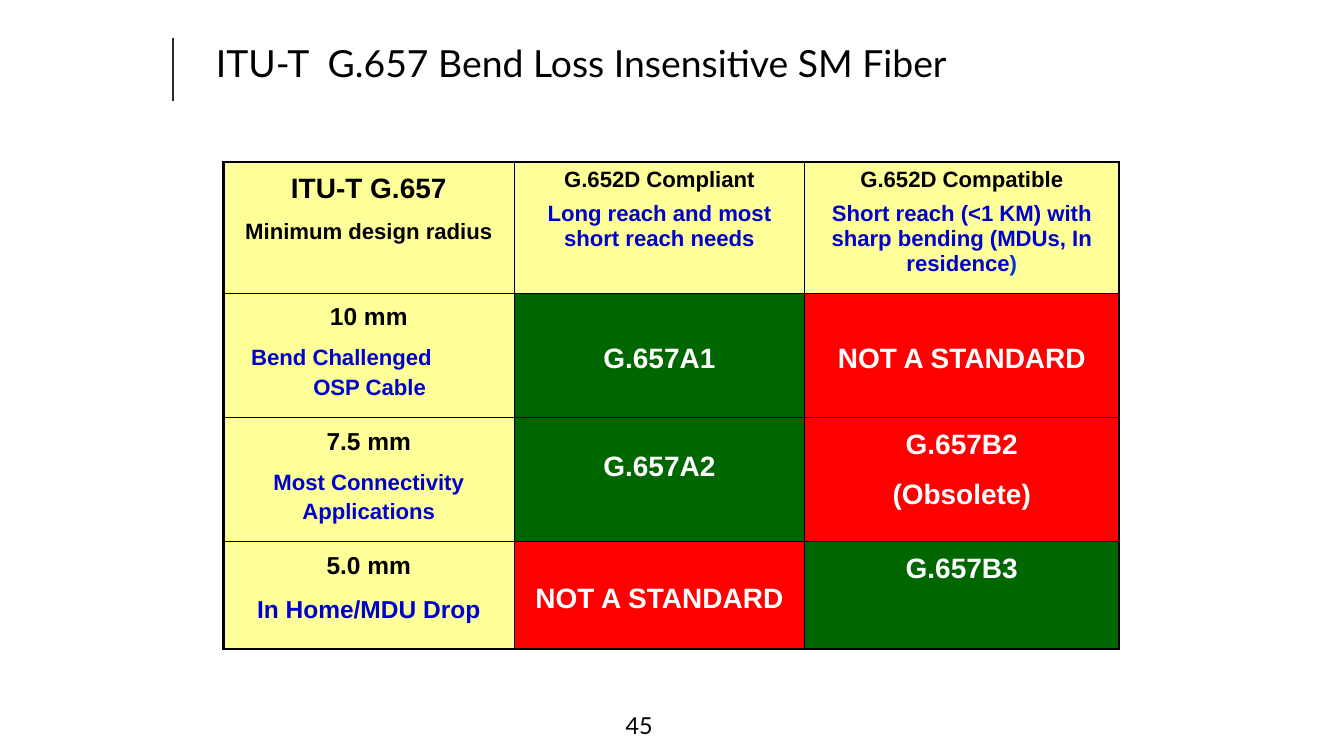
from dataclasses import dataclass

from lxml import etree
from pptx import Presentation
from pptx.dml.color import RGBColor
from pptx.enum.shapes import MSO_CONNECTOR
from pptx.enum.text import MSO_ANCHOR, MSO_AUTO_SIZE, PP_ALIGN
from pptx.oxml.ns import qn
from pptx.util import Inches, Pt

LEFT, CENTER, RIGHT = PP_ALIGN.LEFT, PP_ALIGN.CENTER, PP_ALIGN.RIGHT
TOP, MIDDLE, BOTTOM = MSO_ANCHOR.TOP, MSO_ANCHOR.MIDDLE, MSO_ANCHOR.BOTTOM
NO_AUTOFIT = MSO_AUTO_SIZE.NONE
STRAIGHT = MSO_CONNECTOR.STRAIGHT


@dataclass(frozen=True)
class Theme:
    heading_font: str = "Lato"
    table_font: str = "Arial"
    title_size: int = 32
    page_size: int = 20
    large: int = 24
    medium: int = 21
    small: int = 19
    black: str = "000000"
    white: str = "FFFFFF"
    blue: str = "0000CC"
    bright_blue: str = "0033D6"
    rule: str = "2B2B2B"
    yellow: str = "FFFF99"
    green: str = "006600"
    red: str = "FF0000"
    outer_border: float = 2.25
    inner_border: float = 1


THEME = Theme()

TITLE = "ITU-T  G.657 Bend Loss Insensitive SM Fiber"
PAGE_NUMBER = "45"

LABEL = {"size": THEME.small, "color": THEME.black}
NOTE = {"size": THEME.small, "color": THEME.blue}
RADIUS = {"size": THEME.medium, "color": THEME.black, "spacing": 1.2}
USE = {**NOTE, "spacing": 1.2}
GRADE = {"size": THEME.large, "color": THEME.white, "spacing": 1.2}
HANGING = {"align": LEFT, "margin": 0.95, "indent": -0.74}

ROWS = [
    [
        (THEME.yellow, TOP, [("ITU-T G.657", {**GRADE, "color": THEME.black}),
                             ("Minimum design radius", {**LABEL, "spacing": 1.2})]),
        (THEME.yellow, TOP, [("G.652D Compliant", LABEL),
                             ("Long reach and most short reach needs", NOTE)]),
        (THEME.yellow, TOP, [("G.652D Compatible", LABEL),
                             ("Short reach (<1 KM) with sharp bending (MDUs, In residence",
                              {**NOTE, "ending": ")", "ending_color": THEME.bright_blue})]),
    ],
    [
        (THEME.yellow, TOP, [("10 mm", RADIUS),
                             ("Bend Challenged\nOSP Cable", {**USE, **HANGING})]),
        (THEME.green, MIDDLE, [("G.657A1", GRADE)]),
        (THEME.red, MIDDLE, [("NOT A STANDARD", GRADE)]),
    ],
    [
        (THEME.yellow, TOP, [("7.5 mm", RADIUS), ("Most Connectivity Applications", USE)]),
        (THEME.green, MIDDLE, [("G.657A2", GRADE)]),
        (THEME.red, TOP, [("G.657B2", GRADE), ("(Obsolete)", GRADE)]),
    ],
    [
        (THEME.yellow, TOP, [("5.0 mm", RADIUS),
                             ("In Home/MDU Drop", {**USE, "size": THEME.medium})]),
        (THEME.red, MIDDLE, [("NOT A STANDARD", GRADE)]),
        (THEME.green, TOP, [("G.657B3", GRADE)]),
    ],
]
COLUMN_WIDTHS = [3.46, 3.46, 3.74]
ROW_HEIGHTS = [1.56, 1.48, 1.48, 1.28]
BOTTOM_MARGINS = {(2, 1): 0.44}


def write_text(paragraph, text, size, color, font=THEME.table_font, bold=True, align=CENTER,
               spacing=1.0, before=0, margin=0, indent=0, ending="", ending_color=None):
    paragraph.text = text
    if margin:
        properties = paragraph._p.get_or_add_pPr()
        properties.set("marL", str(Inches(margin)))
        properties.set("indent", str(Inches(indent)))
    paragraph.alignment = align
    paragraph.line_spacing = spacing
    paragraph.space_before = Pt(before)
    colors = [color] * len(paragraph.runs)
    if ending:
        paragraph.add_run().text = ending
        colors.append(ending_color)
    for run, run_color in zip(paragraph.runs, colors):
        run.font.name = font
        run.font.size = Pt(size)
        run.font.bold = bold
        run.font.color.rgb = RGBColor.from_string(run_color)


def set_borders(cell, widths):
    properties = cell._tc.get_or_add_tcPr()
    for side, width in widths.items():
        line = etree.SubElement(properties, qn(f"a:ln{side}"), w=str(Pt(width)))
        fill = etree.SubElement(line, qn("a:solidFill"))
        etree.SubElement(fill, qn("a:srgbClr"), val=THEME.black)


def fill_cell(cell, row, column, color, anchor, paragraphs):
    edges = {"L": column == 0, "R": column == len(COLUMN_WIDTHS) - 1,
             "T": row == 0, "B": row == len(ROW_HEIGHTS) - 1}
    set_borders(cell, {side: THEME.outer_border if outer else THEME.inner_border
                       for side, outer in edges.items()})
    cell.fill.solid()
    cell.fill.fore_color.rgb = RGBColor.from_string(color)
    cell.vertical_anchor = anchor
    cell.margin_left = cell.margin_right = Inches(0.12)
    cell.margin_top = Inches(0.06)
    cell.margin_bottom = Inches(BOTTOM_MARGINS.get((row, column), 0.06))
    frame = cell.text_frame
    for index, (text, style) in enumerate(paragraphs):
        paragraph = frame.add_paragraph() if index else frame.paragraphs[0]
        before = round(style["size"] * 0.45, 1) if index else 0
        write_text(paragraph, text, before=before, **style)


def add_table(slide):
    table = slide.shapes.add_table(
        len(ROW_HEIGHTS), len(COLUMN_WIDTHS), Inches(2.66), Inches(1.93),
        Inches(sum(COLUMN_WIDTHS)), Inches(sum(ROW_HEIGHTS))).table
    table.first_row = table.horz_banding = False
    for column, width in zip(table.columns, COLUMN_WIDTHS):
        column.width = Inches(width)
    for row, height in zip(table.rows, ROW_HEIGHTS):
        row.height = Inches(height)
    for row, cells in enumerate(ROWS):
        for column, content in enumerate(cells):
            fill_cell(table.cell(row, column), row, column, *content)


def place_heading(shape, box, text, size, anchor, align):
    shape.left, shape.top, shape.width, shape.height = map(Inches, box)
    frame = shape.text_frame
    frame.word_wrap = True
    frame.auto_size = NO_AUTOFIT
    frame.vertical_anchor = anchor
    write_text(frame.paragraphs[0], text, size=size, color=THEME.black, bold=False,
               font=THEME.heading_font, align=align, spacing=0.9)


def main():
    presentation = Presentation()
    presentation.slide_width, presentation.slide_height = Inches(16), Inches(9)
    slide = presentation.slides.add_slide(presentation.slide_layouts[5])

    rule = slide.shapes.add_connector(
        STRAIGHT, Inches(2.06), Inches(0.45), Inches(2.06), Inches(1.2))
    rule.line.color.rgb = RGBColor.from_string(THEME.rule)
    rule.line.width = Pt(1)
    etree.SubElement(rule._element.spPr, qn("a:effectLst"))

    place_heading(slide.shapes.title, (2.47, 0.49, 10.39, 0.66),
                  TITLE, THEME.title_size, TOP, LEFT)
    page_box = slide.shapes.add_textbox(0, 0, 0, 0)
    place_heading(page_box, (7.11, 8.35, 0.76, 0.5),
                  PAGE_NUMBER, THEME.page_size, BOTTOM, RIGHT)
    add_table(slide)
    presentation.save("out.pptx")


if __name__ == "__main__":
    main()
